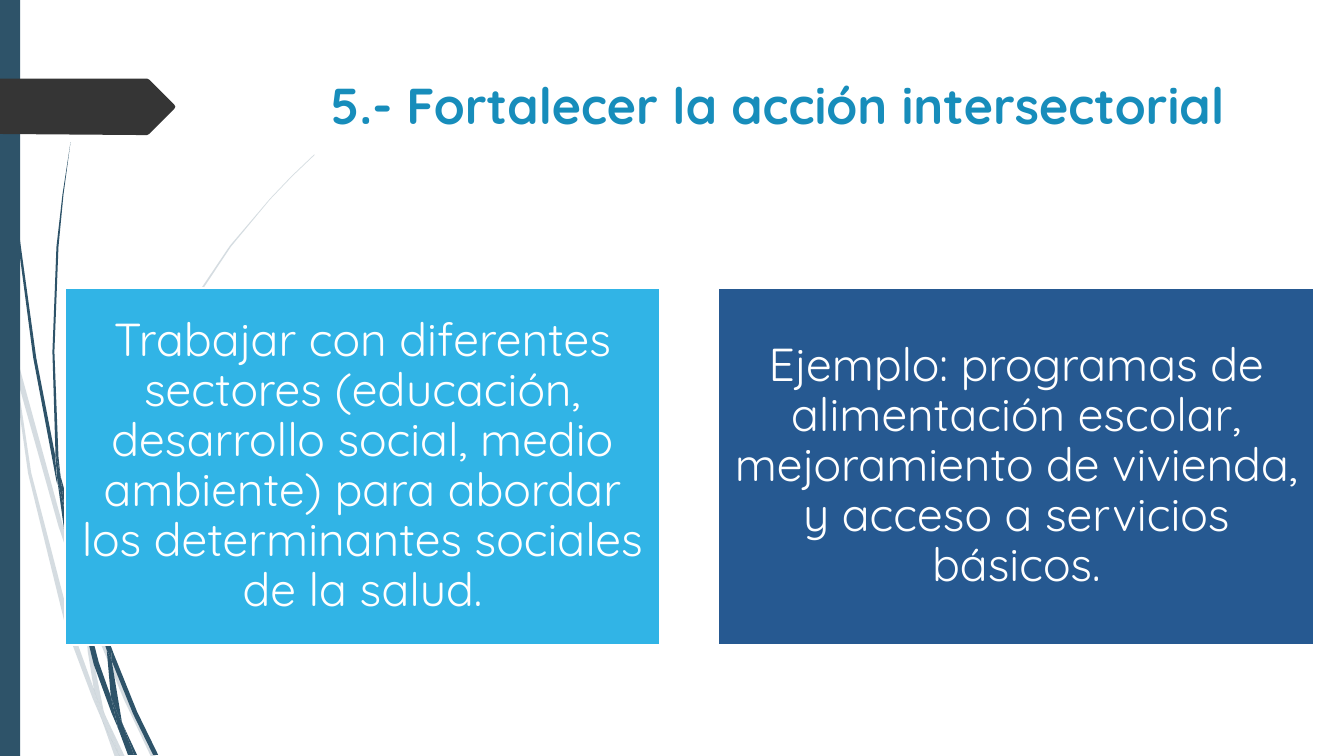
from lxml.etree import SubElement
from pptx import Presentation
from pptx.dml.color import RGBColor
from pptx.enum.shapes import MSO_SHAPE as Preset
from pptx.enum.text import MSO_ANCHOR as Anchor, PP_ALIGN as Align
from pptx.oxml.ns import qn
from pptx.util import Cm, Pt

SLATE = RGBColor(0x2E, 0x53, 0x69)
CHARCOAL = RGBColor(0x35, 0x35, 0x35)
TEAL = RGBColor(0x17, 0x8D, 0xBB)
SKY = RGBColor(0x31, 0xB4, 0xE6)
NAVY = RGBColor(0x26, 0x59, 0x91)
WHITE = RGBColor(0xFF, 0xFF, 0xFF)
FONT = "Quicksand"
OUTLINE_UNIT = Cm(2.54) / 100
PALE_OPACITY = 20

CARD_LEFT, CARD_TOP = 1.63, 7.26
CARD_WIDTH, CARD_HEIGHT = 15.01, 8.99
CARD_PITCH = 16.48
CARDS = [
    ("Trabajar con diferentes sectores (educación, desarrollo social, medio ambiente) "
     "para abordar los determinantes sociales de la salud.", SKY),
    ("Ejemplo: programas de alimentación escolar, mejoramiento de vivienda, "
     "y acceso a servicios básicos.", NAVY),
]

TITLE_FORMAT = {"size": Pt(36), "name": FONT, "bold": True}
CARD_FORMAT = {"size": Pt(33), "name": FONT, "bold": False}
TITLE_FRAME = {"word_wrap": True, "vertical_anchor": Anchor.TOP}
CARD_FRAME = {
    "word_wrap": True, "vertical_anchor": Anchor.MIDDLE,
    "margin_left": Cm(0.36), "margin_right": Cm(0.36),
    "margin_top": Cm(0.36), "margin_bottom": Cm(0.36),
}

PALE_WISPS = [
    [(11, 350), (9, 322), (0, 282), (0, 299), (10, 344)],
    [(58, 522), (84, 599), (85, 586), (62, 520), (14, 345), (17, 376)],
    [(92, 607), (88, 596), (88, 610), (123, 694), (150, 751), (155, 751), (127, 692)],
    [(119, 751), (124, 751), (105, 711)],
    [(93, 683), (70, 619), (31, 469), (17, 376), (11, 350), (28, 470), (65, 621),
     (92, 693), (101, 714), (99, 707)],
    [(84, 599), (87, 646), (93, 683), (96, 692), (105, 711), (103, 706), (91, 646),
     (88, 610), (88, 608)],
    [(88, 584), (110, 462), (160, 349), (229, 245), (268, 198), (290, 175), (312, 154),
     (312, 153), (289, 175), (268, 197), (228, 244), (158, 348), (107, 461), (85, 584),
     (85, 586), (88, 596)],
    [(101, 714), (114, 751), (119, 751)],
    [(96, 692), (93, 683), (99, 707), (101, 714), (119, 751), (105, 711)],
]
DARK_WISPS = [
    [(7, 110), (17, 233), (33, 355), (56, 477), (57, 481), (55, 457), (55, 453),
     (36, 355), (19, 232), (8, 109), (5, 48), (4, 0), (3, 0), (4, 48)],
    [(88, 592), (106, 645), (106, 633), (106, 631), (93, 590), (60, 472), (64, 505)],
    [(113, 649), (110, 641), (111, 656), (132, 708), (152, 749), (157, 749), (136, 706)],
    [(110, 691), (98, 657), (72, 556), (64, 505), (57, 477), (68, 557), (93, 659),
     (111, 708), (117, 722), (116, 717)],
    [(60, 472), (58, 453), (54, 349), (58, 245), (63, 193), (70, 141), (62, 193),
     (56, 245), (52, 349), (55, 449)],
    [(133, 749), (136, 749), (122, 719)],
    [(57, 477), (64, 505), (60, 472), (55, 449), (55, 453)],
    [(111, 633), (125, 552), (158, 476), (205, 406), (231, 374), (245, 359), (261, 344),
     (260, 344), (245, 358), (231, 373), (204, 405), (156, 474), (122, 551), (106, 631),
     (110, 641)],
    [(117, 722), (127, 749), (131, 749)],
    [(106, 645), (110, 691), (116, 706), (122, 719), (121, 716), (111, 656), (109, 651)],
    [(106, 645), (109, 651), (111, 656), (110, 641), (106, 631)],
    [(116, 706), (110, 691), (116, 717), (117, 722), (130, 749), (133, 749), (122, 719)],
]
TITLE_MARKER = [
    (0, 78), (146, 78), (148, 79), (173, 104), (174, 106), (173, 108),
    (148, 133), (146, 134), (136, 134), (0, 133),
]


def apply_format(target, values):
    for name, value in values.items():
        setattr(target, name, value)


def paint(shape, color):
    shape.shadow.inherit = False
    shape.fill.solid()
    shape.fill.fore_color.rgb = color
    shape.line.fill.background()


def set_opacity(shape, percent):
    for color in shape.element.iter(qn("a:srgbClr")):
        SubElement(color, qn("a:alpha"), val=str(percent * 1000))


def add_outline(shapes, points, color):
    builder = shapes.build_freeform(*points[0], scale=OUTLINE_UNIT)
    builder.add_line_segments(points[1:], close=True)
    outline = builder.convert_to_shape()
    paint(outline, color)
    return outline


def add_wisps(page, wisps, opacity=100):
    group = page.shapes.add_group_shape()
    for points in wisps:
        wisp = add_outline(group.shapes, points, SLATE)
        if opacity < 100:
            set_opacity(wisp, opacity)


def add_rectangle(page, left, top, width, height, color):
    box = page.shapes.add_shape(
        Preset.RECTANGLE, Cm(left), Cm(top), Cm(width), Cm(height))
    paint(box, color)
    return box


def write_text(frame, text, color, frame_format, font_format):
    apply_format(frame, frame_format)
    para = frame.paragraphs[0]
    para.alignment = Align.CENTER
    span = para.add_run()
    span.text = text
    apply_format(span.font, font_format)
    span.font.color.rgb = color
    return para


def add_card(page, left, text, color):
    box = add_rectangle(page, left, CARD_TOP, CARD_WIDTH, CARD_HEIGHT, color)
    box.line.color.rgb = WHITE
    box.line.width = Pt(1.25)
    para = write_text(box.text_frame, text, WHITE, CARD_FRAME, CARD_FORMAT)
    para.line_spacing = 0.9


def place_title(page, text):
    title = page.shapes.title
    apply_format(title, {"left": Cm(7.21), "top": Cm(1.73),
                         "width": Cm(24.77), "height": Cm(3.56)})
    write_text(title.text_frame, text, TEAL, TITLE_FRAME, TITLE_FORMAT)


def main():
    deck = Presentation()
    deck.slide_width, deck.slide_height = Cm(33.87), Cm(19.05)
    page = deck.slides.add_slide(deck.slide_layouts[5])
    add_wisps(page, PALE_WISPS, PALE_OPACITY)
    add_wisps(page, DARK_WISPS)
    add_rectangle(page, 0, 0, 0.51, 19.05, SLATE)
    add_outline(page.shapes, TITLE_MARKER, CHARCOAL)
    place_title(page, "5.- Fortalecer la acción intersectorial")
    for index, (text, color) in enumerate(CARDS):
        add_card(page, CARD_LEFT + index * CARD_PITCH, text, color)
    deck.save("out.pptx")


if __name__ == "__main__":
    main()
